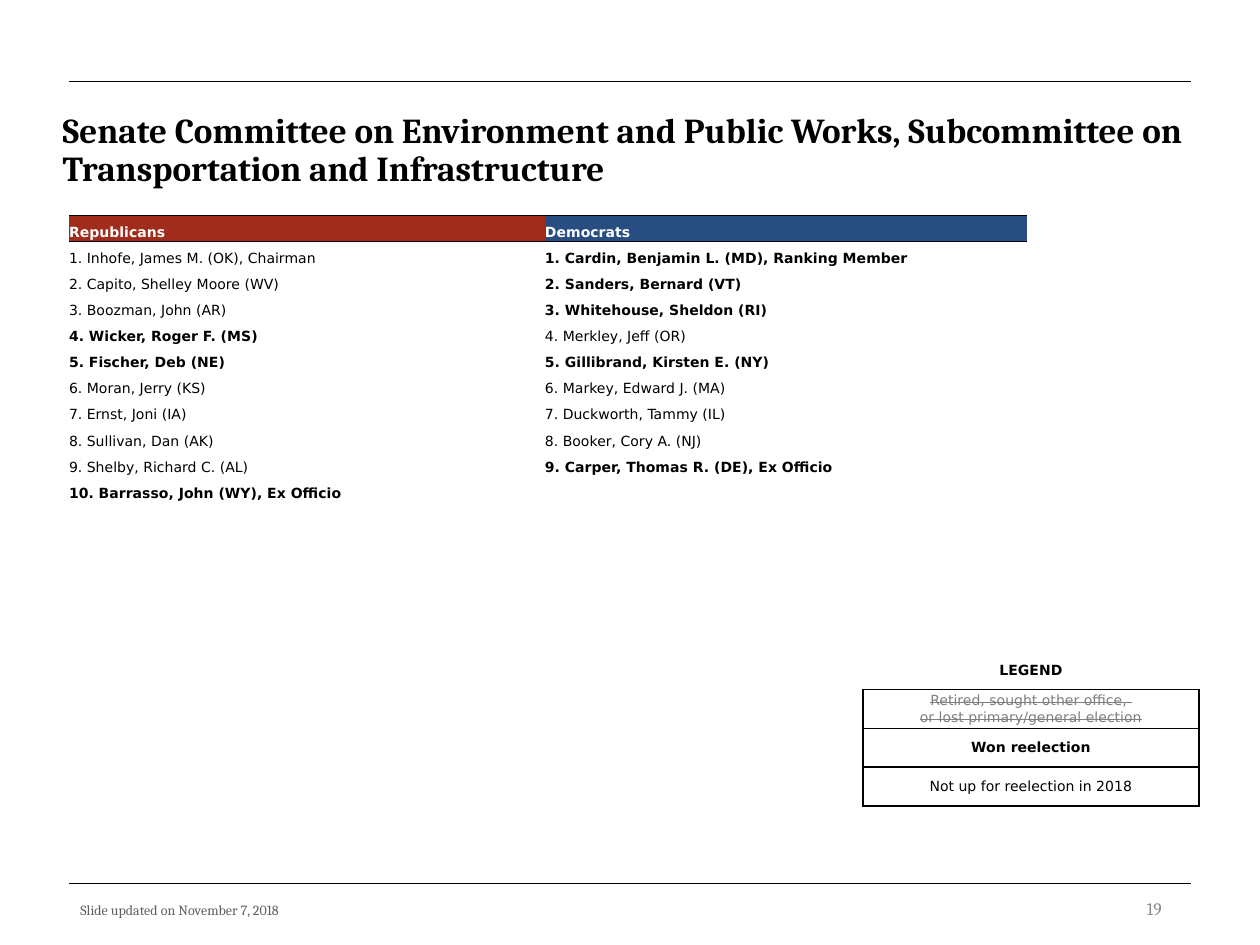
"""Build the slide on the Senate transportation and infrastructure subcommittee."""
from itertools import zip_longest
from lxml import etree
from pptx import Presentation
from pptx import util as u
from pptx.dml import color
from pptx.enum import shapes, text
from pptx.oxml import ns

PX = 914400 / 126
BLACK, WHITE, GREY = "000000", "FFFFFF", "7F7F7F"
SERIF, SANS = "Cambria", "DejaVu Sans"
hue = color.RGBColor.from_string


def add_run(paragraph, words, font, size, shade, bold=False):
    run = paragraph.add_run()
    run.text = words
    run.font.name, run.font.size, run.font.bold = font, u.Pt(size), bold
    run.font.color.rgb = hue(shade)
    return run


def format_cell(cell, anchor, inset_x, inset_y, edges, points, fill=None):
    cell.vertical_anchor = anchor
    cell.margin_left = cell.margin_right = u.Inches(inset_x)
    cell.margin_top = cell.margin_bottom = u.Inches(inset_y)
    properties = cell._tc.get_or_add_tcPr()
    for edge in "LRTB":
        border = etree.SubElement(properties, ns.qn(f"a:ln{edge}"), w=str(u.Pt(points)))
        if edge in edges:
            solid = etree.SubElement(border, ns.qn("a:solidFill"))
            etree.SubElement(solid, ns.qn("a:srgbClr"), val=BLACK)
        else:
            etree.SubElement(border, ns.qn("a:noFill"))
    if fill:
        cell.fill.solid()
        cell.fill.fore_color.rgb = hue(fill)
    else:
        cell.fill.background()


deck = Presentation()
deck.slide_width, deck.slide_height = u.Inches(10), u.Inches(7.5)
slide = deck.slides.add_slide(deck.slide_layouts[5])

for y in (883, 81):
    rule = slide.shapes.add_connector(
        shapes.MSO_CONNECTOR.STRAIGHT, *(round(n * PX) for n in (69, y, 1191, y)))
    rule.line.color.rgb = hue(BLACK)
    rule.line.width = u.Pt(0.5)
    etree.SubElement(rule._element.spPr, ns.qn("a:effectLst"))

title = slide.shapes.title
title.left, title.top, title.width, title.height = (round(n * PX) for n in (50, 107, 1159, 88))
title.text_frame.vertical_anchor = text.MSO_ANCHOR.MIDDLE
title.text_frame.auto_size = text.MSO_AUTO_SIZE.NONE
heading = title.text_frame.paragraphs[0]
heading.alignment = text.PP_ALIGN.LEFT
heading.line_spacing = 0.9
add_run(heading, "Senate Committee on Environment and Public Works, Subcommittee on "
        "Transportation and Infrastructure", SERIF, 20, BLACK, True)

for words, box, size, shade, align in (
        ("Slide updated on November 7, 2018", (68, 895, 554, 30), 8, "5F5F5F", text.PP_ALIGN.LEFT),
        ("19", (890, 890, 284, 37), 10, "8C8C8C", text.PP_ALIGN.RIGHT)):
    footer = slide.shapes.add_textbox(*(round(n * PX) for n in box)).text_frame
    footer.word_wrap = True
    footer.vertical_anchor = text.MSO_ANCHOR.MIDDLE
    footer.paragraphs[0].alignment = align
    add_run(footer.paragraphs[0], words, SERIF, size, shade)

legend_rows = [
    (["LEGEND"], BLACK, True, False),
    (["Retired, sought other office, ", "or lost primary/general election"], GREY, False, True),
    (["Won reelection"], BLACK, True, False),
    (["Not up for reelection in 2018"], BLACK, False, False),
]
legend = slide.shapes.add_table(
    len(legend_rows), 1, *(round(n * PX) for n in (863, 651, 336, 155))).table
legend.first_row = legend.horz_banding = False
for row, (lines, shade, bold, struck) in enumerate(legend_rows):
    cell = legend.cell(row, 0)
    format_cell(cell, text.MSO_ANCHOR.MIDDLE, 0.04, 0.02, "LRTB" if row else "B", 1)
    for number, line in enumerate(lines):
        paragraph = cell.text_frame.add_paragraph() if number else cell.text_frame.paragraphs[0]
        paragraph.alignment = text.PP_ALIGN.CENTER
        run = add_run(paragraph, line, SANS, 8, shade, bold)
        if struck:
            run._r.get_or_add_rPr().set("strike", "sngStrike")

republicans = [
    "Inhofe, James M. (OK), Chairman", "Capito, Shelley Moore (WV)", "Boozman, John (AR)",
    "Wicker, Roger F. (MS)", "Fischer, Deb (NE)", "Moran, Jerry (KS)", "Ernst, Joni (IA)",
    "Sullivan, Dan (AK)", "Shelby, Richard C. (AL)", "Barrasso, John (WY), Ex Officio",
]
democrats = [
    "Cardin, Benjamin L. (MD), Ranking Member", "Sanders, Bernard (VT)",
    "Whitehouse, Sheldon (RI)", "Merkley, Jeff (OR)", "Gillibrand, Kirsten E. (NY)",
    "Markey, Edward J. (MA)", "Duckworth, Tammy (IL)", "Booker, Cory A. (NJ)",
    "Carper, Thomas R. (DE), Ex Officio",
]
parties = [("Republicans", "A02C1C", 476, {4, 5, 10}), ("Democrats", "284D81", 482, {1, 2, 3, 5, 9})]
members = slide.shapes.add_table(
    len(republicans) + 1, 2, *(round(n * PX) for n in (69, 215, 958, 287))).table
members.first_row = members.horz_banding = False
for column, (party, fill, width, reelected) in enumerate(parties):
    members.columns[column].width = round(width * PX)
    cell = members.cell(0, column)
    format_cell(cell, text.MSO_ANCHOR.BOTTOM, 0, 0, "TB", 0.5, fill)
    add_run(cell.text_frame.paragraphs[0], party, SANS, 8, WHITE, True)
for row, names in enumerate(zip_longest(republicans, democrats), start=1):
    for column, name in enumerate(names):
        cell = members.cell(row, column)
        format_cell(cell, text.MSO_ANCHOR.BOTTOM, 0, 0, "T" if row == 1 else "", 0.5)
        paragraph = cell.text_frame.paragraphs[0]
        if name:
            add_run(paragraph, f"{row}. {name}", SANS, 8, BLACK, row in parties[column][3])
        else:
            paragraph._p.get_or_add_endParaRPr().set("sz", "800")

deck.save("out.pptx")
